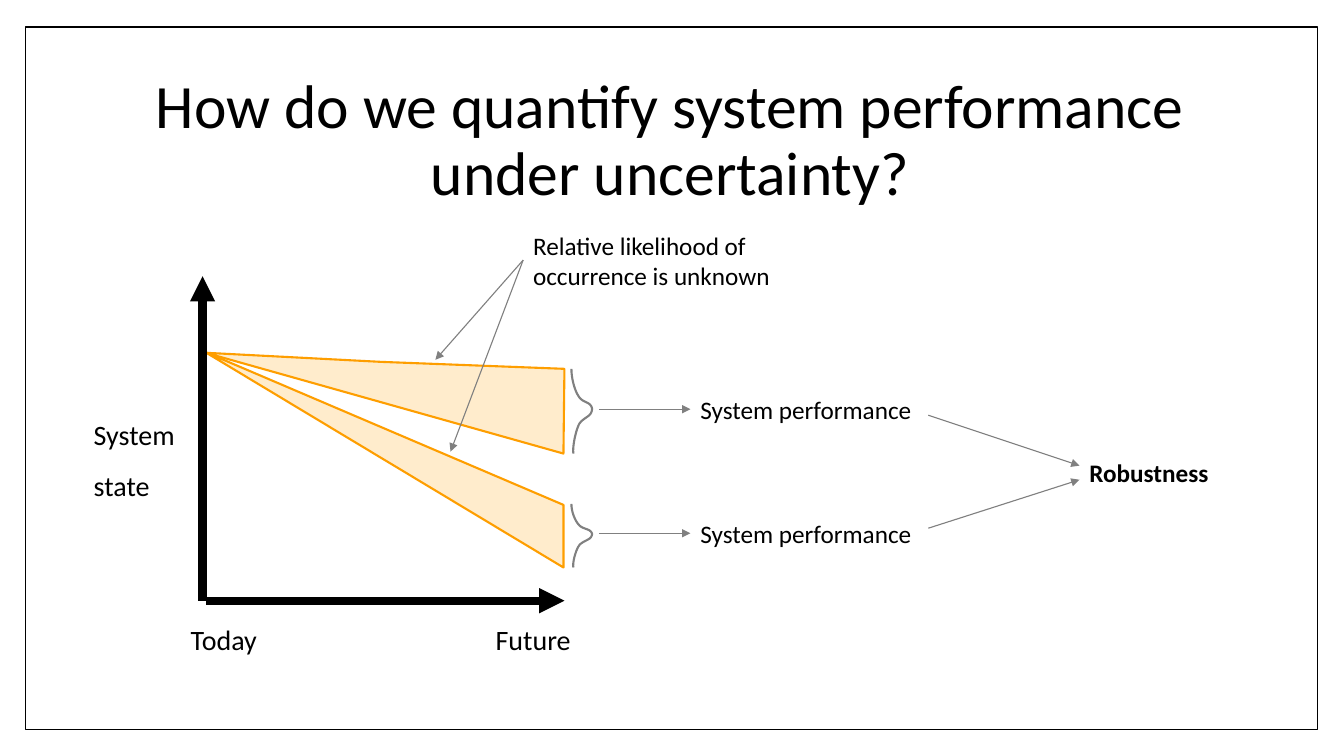
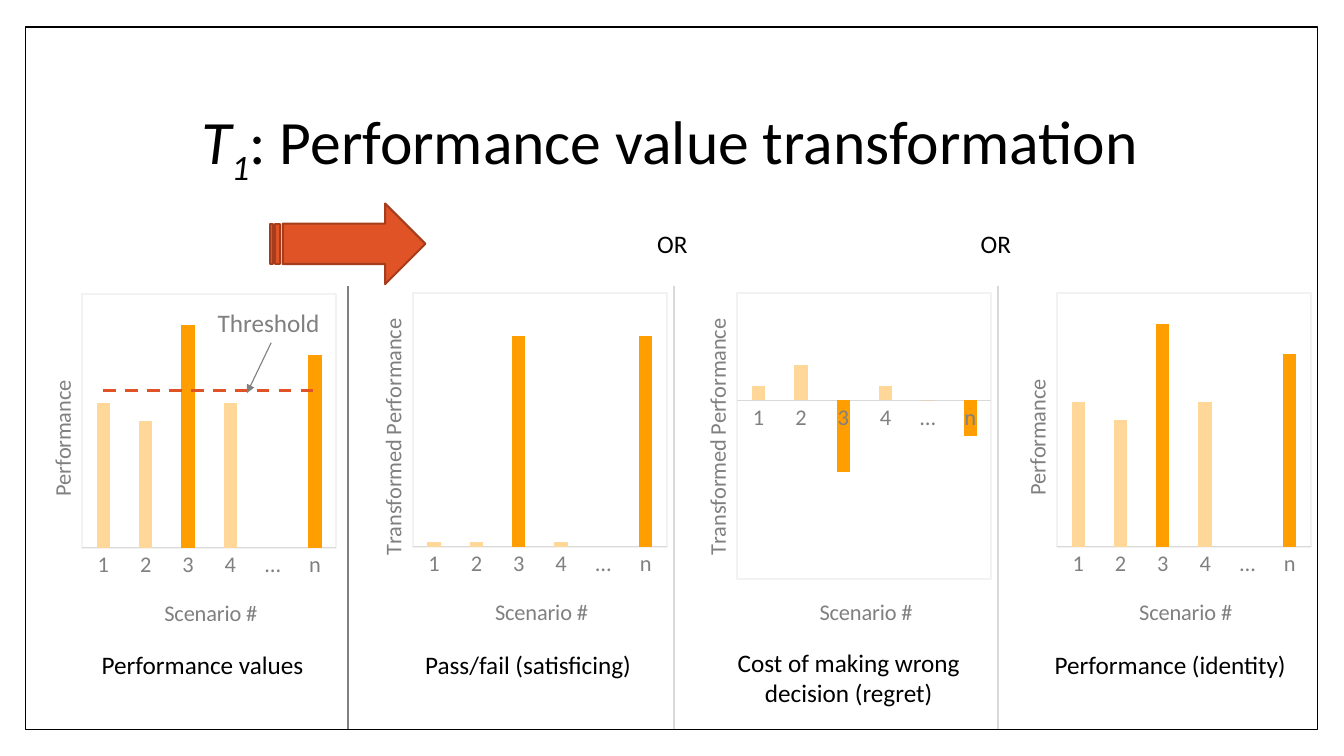
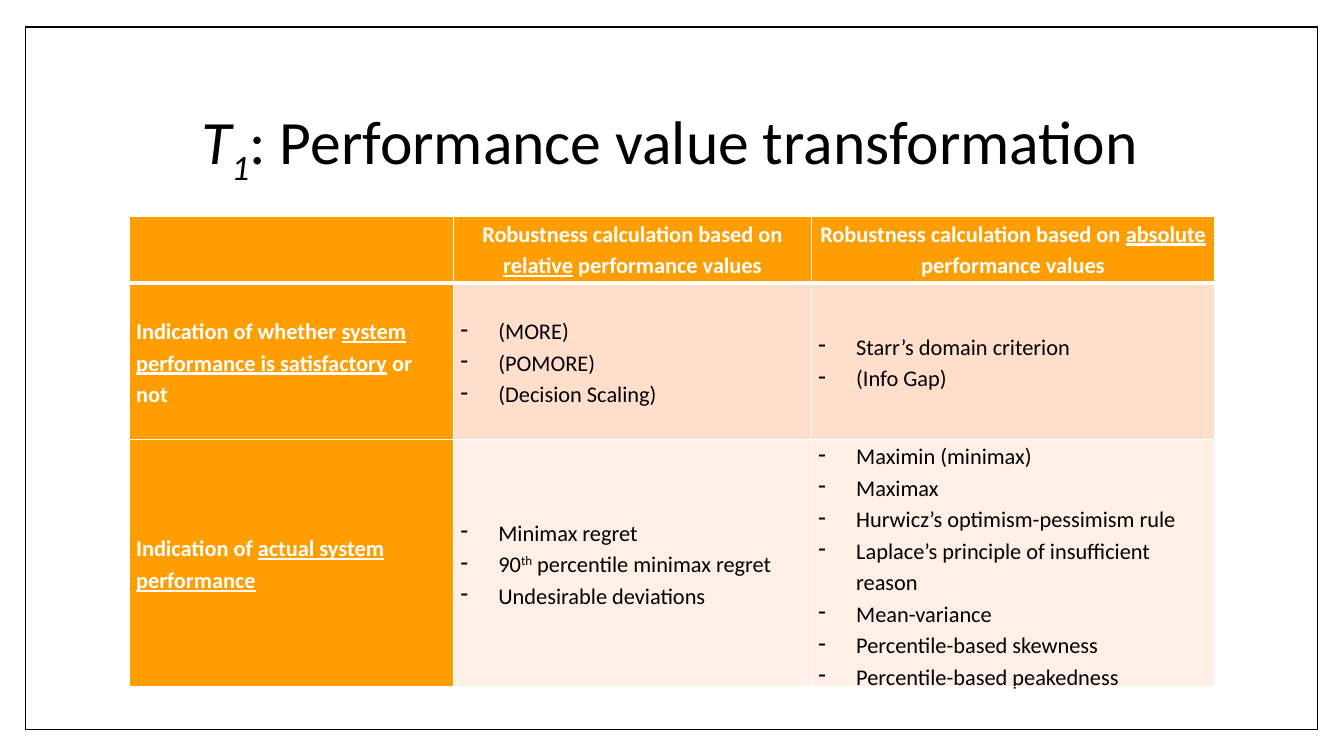
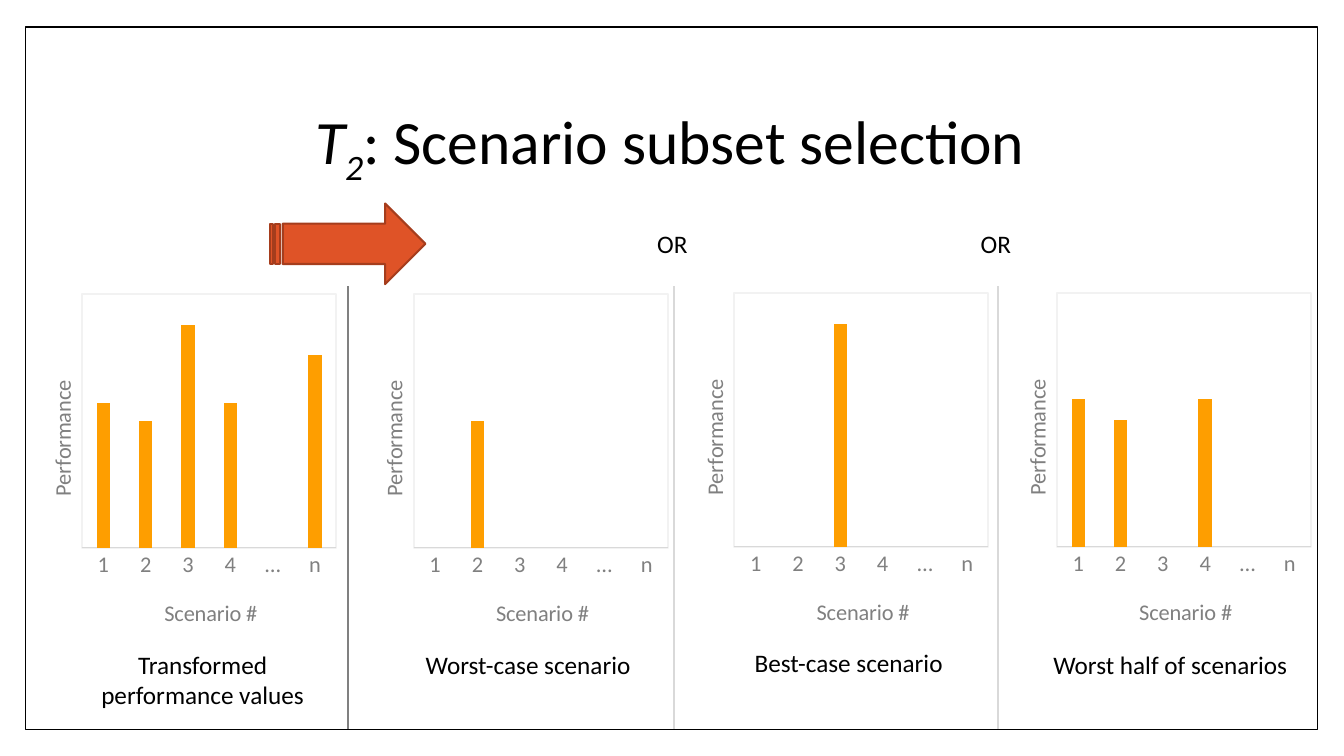
"""Build four slides on measuring system performance under uncertainty."""
from copy import deepcopy

from pptx import Presentation
from pptx import util as u
from pptx.chart.data import CategoryChartData
from pptx.dml.color import RGBColor
from pptx.enum import chart as charts
from pptx.enum import dml, shapes, text
from pptx.oxml import parse_xml
from pptx.oxml.ns import nsdecls, qn

FONT = "Calibri"
BLACK, WHITE, GRAY, PALE_GRAY = "000000", "FFFFFF", "808080", "D9D9D9"
ORANGE, PALE_ORANGE, WEDGE_FILL = "FE9E00", "FFD899", "FFECCC"
RED, DARK_RED = "DF5327", "A53D1D"
BODY_FILLS = ["FFDFCC", "FFF0E7"]
CENTER = text.PP_ALIGN.CENTER
CATEGORIES = ["1", "2", "3", "4", "…", "n"]
VALUES = [87, 84, 100, 87, 0, 95]
CHART_SIZE = (232.6, 254.9)
CAPTION_WIDTH = 204.5
BRACE_CURVES = [
    [(0, 0), (0, 0.11), (2.2, 0.25), (5, 0.32)],
    [(5, 0.32), (7.2, 0.39), (12.2, 0.39), (13.7, 0.43)],
    [(13.7, 0.43), (15.1, 0.46), (15.1, 0.49), (13.7, 0.53)],
    [(13.7, 0.53), (12.2, 0.57), (6.5, 0.6), (5, 0.67)],
    [(5, 0.67), (2.9, 0.75), (0.7, 0.92), (1.4, 1)],
]


def color(value):
    """Turn a hex string into a colour."""
    return RGBColor.from_string(value)


def points(*lengths):
    """Turn numbers into lengths in points."""
    return [u.Pt(length) for length in lengths]


def style_font(font, size, shade, bold=False):
    """Set the shared font with a size and colour."""
    font.name, font.size, font.bold = FONT, u.Pt(size), bold
    font.color.rgb = color(shade)


def style_line(line, shade, width):
    """Set a solid line colour and width."""
    line.color.rgb = color(shade)
    line.width = u.Pt(width)


def style_shape(shape, fill, shade, width):
    """Set fill and outline, without shadow."""
    shape.shadow.inherit = False
    if fill:
        shape.fill.solid()
        shape.fill.fore_color.rgb = color(fill)
    else:
        shape.fill.background()
    style_line(shape.line, shade, width)


def write_runs(paragraph, pieces, size, shade, bold=False):
    """Add runs given as plain strings or as (string, marks) pairs."""
    for piece in pieces:
        words, marks = (piece, "") if isinstance(piece, str) else piece
        run = paragraph.add_run()
        run.text = words
        style_font(run.font, size, shade, bold)
        run.font.italic = "italic" in marks
        run.font.underline = "underline" in marks
        for mark, baseline in (("sub", "-25000"), ("super", "30000")):
            if mark in marks:
                run.font._element.set("baseline", baseline)


def add_text(slide, box, pieces, size=18, shade=BLACK, bold=False, align=None, spacing=None):
    """Add a wrapped text box and return it."""
    shape = slide.shapes.add_textbox(*points(*box))
    shape.text_frame.word_wrap = True
    paragraph = shape.text_frame.paragraphs[0]
    paragraph.alignment = align
    paragraph.line_spacing = spacing
    write_runs(paragraph, pieces, size, shade, bold)
    return shape


def add_title(slide, pieces):
    """Add the centred slide title."""
    shape = add_text(slide, (90, 48.2, 777.6, 106.6), pieces, 44, align=CENTER, spacing=0.9)
    shape.text_frame.vertical_anchor = text.MSO_ANCHOR.MIDDLE


def add_line(slide, start, end, shade=GRAY, width=0.79, arrow=True):
    """Add a straight line, by default with an arrowhead."""
    connector = slide.shapes.add_connector(shapes.MSO_CONNECTOR.STRAIGHT, *points(*start, *end))
    style_line(connector.line, shade, width)
    properties = connector._element.spPr
    if arrow:
        head = parse_xml(f'<a:tailEnd {nsdecls("a")} type="triangle"/>')
        properties.find(qn("a:ln")).append(head)
    properties.append(parse_xml(f'<a:effectLst {nsdecls("a")}/>'))


def add_outline(slide, corners, fill, shade, closed=True):
    """Add a freeform through the given corners."""
    start, *rest = [points(*corner) for corner in corners]
    builder = slide.shapes.build_freeform(*start, scale=1.0)
    builder.add_line_segments(rest, close=closed)
    style_shape(builder.convert_to_shape(), fill, shade, 1.5)


def curve_point(curve, step):
    """Return the point of a cubic curve at a step from 0 to 1."""
    rest = 1 - step
    weights = (rest**3, 3 * rest**2 * step, 3 * rest * step**2, step**3)
    return [sum(w * p[axis] for w, p in zip(weights, curve)) for axis in (0, 1)]


def add_brace(slide, left, top, height):
    """Add a curved brace that opens to the left."""
    route = [curve_point(curve, step / 8) for curve in BRACE_CURVES for step in range(9)]
    corners = [(left + x, top + y * height) for x, y in route]
    add_outline(slide, corners, None, GRAY, closed=False)


def make_layout(x, y, size=None):
    """Return a manual chart layout in fractions of the chart."""
    target = '<c:layoutTarget val="inner"/>' if size else ""
    sides = {"x": x, "y": y}
    if size:
        sides.update(w=size[0], h=size[1])
    modes = '<c:xMode val="edge"/><c:yMode val="edge"/>'
    values = "".join(f'<c:{side} val="{value}"/>' for side, value in sides.items())
    return parse_xml(f'<c:layout {nsdecls("c")}><c:manualLayout>{target}{modes}{values}'
                     '</c:manualLayout></c:layout>')


def title_axis(axis, words, x, y, rotation=0):
    """Give an axis a title at a fixed place."""
    title = axis.axis_title
    title.text_frame.text = words
    style_font(title.text_frame.paragraphs[0].runs[0].font, 16, GRAY)
    element = title._element
    element.find(".//" + qn("a:bodyPr")).set("rot", str(rotation * 60000))
    for layout in element.findall(qn("c:layout")):
        element.remove(layout)
    element.find(qn("c:tx")).addnext(make_layout(x, y))


def split_threshold(chart):
    """Turn the second column series into a dashed line."""
    bars = chart._chartSpace.find(".//" + qn("c:barChart"))
    series = bars.findall(qn("c:ser"))[1]
    lines = parse_xml(f'<c:lineChart {nsdecls("c")}><c:grouping val="standard"/>'
                      '<c:varyColors val="0"/><c:marker val="1"/></c:lineChart>')
    for inversion in series.findall(qn("c:invertIfNegative")):
        series.remove(inversion)
    lines.insert(2, series)
    for axis in bars.findall(qn("c:axId")):
        lines.append(deepcopy(axis))
    bars.addnext(lines)
    threshold = chart.plots[1].series[0]
    style_line(threshold.format.line, RED, 2.25)
    threshold.format.line.dash_style = dml.MSO_LINE.DASH
    threshold.marker.style = charts.XL_MARKER_STYLE.NONE
    threshold.smooth = False


def frame_plot(chart, height):
    """Place the plot area, outline it and clear the chart background."""
    area = chart._chartSpace.chart.plotArea
    for layout in area.findall(qn("c:layout")):
        area.remove(layout)
    area.insert(0, make_layout(0.2, 0.02, (0.78, height)))
    area.append(parse_xml(
        f'<c:spPr {nsdecls("c", "a")}><a:noFill/><a:ln w="{u.Pt(1.5)}"><a:solidFill>'
        '<a:srgbClr val="F2F2F2"/></a:solidFill></a:ln></c:spPr>'))
    chart._chartSpace.chart.addnext(parse_xml(
        f'<c:spPr {nsdecls("c", "a")}><a:noFill/><a:ln><a:noFill/></a:ln></c:spPr>'))


def add_columns(slide, corner, values, limits, strong=range(6), label="Performance",
                height=0.71, threshold=None):
    """Add a column chart with strong and pale columns."""
    data = CategoryChartData()
    data.categories = CATEGORIES
    data.add_series("Series 1", values)
    if threshold:
        data.add_series("Series 2", [threshold] * len(CATEGORIES))
    chart = slide.shapes.add_chart(
        charts.XL_CHART_TYPE.COLUMN_CLUSTERED, *points(*corner, *CHART_SIZE), data).chart
    style_font(chart.font, 10, BLACK)
    chart.has_legend = chart.has_title = False
    if threshold:
        split_threshold(chart)
    plot = chart.plots[0]
    plot.gap_width, plot.overlap, plot.vary_by_categories = 219, -27, False
    series = plot.series[0]
    series.invert_if_negative = False
    series.format.fill.solid()
    series.format.fill.fore_color.rgb = color(PALE_ORANGE)
    for index in strong:
        fill = series.points[index].format.fill
        fill.solid()
        fill.fore_color.rgb = color(ORANGE)
    category, value = chart.category_axis, chart.value_axis
    for axis in (category, value):
        axis.major_tick_mark = axis.minor_tick_mark = charts.XL_TICK_MARK.NONE
        axis.has_major_gridlines = False
    style_font(category.tick_labels.font, 16, GRAY)
    style_line(category.format.line, PALE_GRAY, 0.75)
    value.minimum_scale, value.maximum_scale = limits
    value.tick_label_position = charts.XL_TICK_LABEL_POSITION.NONE
    value.format.line.fill.background()
    title_axis(category, "Scenario #", 0.44, 0.86)
    title_axis(value, label, 0.08, 0.25 if label == "Performance" else 0.08, -90)
    frame_plot(chart, height)


def add_panels(slide, captions):
    """Add what both chart slides share: dividers, arrow, choices and captions."""
    for x, shade in ((248.4, GRAY), (481.7, PALE_GRAY), (712.8, PALE_GRAY)):
        add_line(slide, (x, 520.6), (x, 204.5), shade, 1.5, arrow=False)
    arrow = slide.shapes.add_shape(
        shapes.MSO_SHAPE.STRIPED_RIGHT_ARROW, *points(193, 145.4, 110.9, 57.6))
    style_shape(arrow, RED, DARK_RED, 1.5)
    for left in (378, 609.1):
        add_text(slide, (left, 159.8, CAPTION_WIDTH, 28.8), ["OR"], align=CENTER)
    corners = ((42.5, 460.1), (275, 460.1), (504, 458.6), (733.7, 460.1))
    for corner, caption in zip(corners, captions):
        add_text(slide, (*corner, CAPTION_WIDTH, 28.8), [caption], align=CENTER)


def set_borders(cell, bottom):
    """Give a cell white borders."""
    properties = cell._tc.get_or_add_tcPr()
    for index, (side, width) in enumerate((("L", 1), ("R", 1), ("T", 1), ("B", bottom))):
        properties.insert(index, parse_xml(
            f'<a:ln{side} {nsdecls("a")} w="{u.Pt(width)}"><a:solidFill>'
            f'<a:srgbClr val="{WHITE}"/></a:solidFill></a:ln{side}>'))


def fill_cell(cell, paragraphs, fill, header=False, bullets=False):
    """Write the paragraphs of a table cell and style it."""
    cell.fill.solid()
    cell.fill.fore_color.rgb = color(fill)
    set_borders(cell, 3 if header else 1)
    cell.margin_left = cell.margin_right = u.Pt(5)
    cell.margin_top = cell.margin_bottom = 0
    cell.vertical_anchor = text.MSO_ANCHOR.TOP if header else text.MSO_ANCHOR.MIDDLE
    for index, pieces in enumerate(paragraphs):
        frame = cell.text_frame
        paragraph = frame.add_paragraph() if index else frame.paragraphs[0]
        paragraph.line_spacing = 1.15
        paragraph.alignment = CENTER if header else None
        write_runs(paragraph, pieces, 16, BLACK if bullets else WHITE, not bullets)
        if bullets:
            properties = paragraph._p.get_or_add_pPr()
            properties.set("marL", str(u.Pt(27)))
            properties.set("indent", str(-u.Pt(27)))
            properties.append(parse_xml(f'<a:buChar {nsdecls("a")} char="-"/>'))


def add_grid(slide, corner, widths, heights, rows):
    """Add a table with a header row and a header column."""
    size = (sum(widths), sum(heights))
    table = slide.shapes.add_table(
        len(heights), len(widths), *points(*corner, *size)).table
    table.first_row = table.horz_banding = False
    for column, width in zip(table.columns, widths):
        column.width = u.Pt(width)
    for row, height in zip(table.rows, heights):
        row.height = u.Pt(height)
    for i, row in enumerate(rows):
        for j, paragraphs in enumerate(row):
            body = i > 0 and j > 0
            fill = BODY_FILLS[i - 1] if body else ORANGE
            fill_cell(table.cell(i, j), paragraphs, fill, header=i == 0, bullets=body)


def add_frame(presentation, slide):
    """Put the border that all slides share on the master."""
    frame = slide.shapes.add_shape(
        shapes.MSO_SHAPE.RECTANGLE, *points(18, 19.4, 923, 501.8))
    style_shape(frame, WHITE, BLACK, 1)
    presentation.slide_master.shapes._spTree.insert(2, frame._element)


def build_question(slide):
    """Draw the diverging futures and their route to robustness."""
    add_title(slide, ["How do we quantify system performance under uncertainty?"])
    for top in (277.9, 366.5):
        add_text(slide, (493.2, top, 170, 28.8), ["System performance"])
        add_line(slide, (427.7, top + 14.4), (493.2, top + 14.4))
    add_text(slide, (771.1, 323.3, 120.2, 28.8), ["Robustness"], bold=True)
    add_line(slide, (663.1, 296.6), (771.1, 332.6))
    add_line(slide, (663.1, 377.3), (771.1, 342.7))
    add_text(slide, (59.8, 283, 79.9, 80.6), ["System state"], 20, spacing=1.5)
    for left, label in ((121.7, "Today"), (342.7, "Future")):
        add_text(slide, (left, 429.1, 76.3, 52.6), [label], 20, align=CENTER, spacing=1.5)
    add_line(slide, (146.9, 429.1), (403.2, 429.1), BLACK, 6)
    upper = [(146.9, 252), (272, 258.5), (403.2, 263.5), (402.5, 324)]
    lower = [(146.2, 251.3), (402.5, 405.4), (402.5, 360.7)]
    for wedge in (upper, lower):
        add_outline(slide, wedge, WEDGE_FILL, ORANGE)
    add_brace(slide, 408.2, 263.5, 60.5)
    add_brace(slide, 408.2, 360, 45.4)
    add_line(slide, (144.7, 429.1), (144.7, 197.3), BLACK, 6)
    add_text(slide, (373.7, 160.6, 238.3, 51.1),
             ["Relative likelihood of occurrence is unknown"])
    for end in ((311, 257), (321.8, 322.6)):
        add_line(slide, (373.7, 185.8), end)


def build_transformation(slide, title):
    """Show performance values and three ways to transform them."""
    add_title(slide, title)
    transformed = "Transformed Performance"
    add_columns(slide, (12.2, 205.2), VALUES, (63, 105), (2, 5), threshold=89)
    add_columns(slide, (248.4, 204.5), [2, 2, 100, 2, None, 100], (0, 120), (2, 5), transformed)
    add_columns(slide, (480.2, 204.5), [20, 50, -100, 20, 0, -50], (-250, 150), (2, 4, 5),
                transformed, height=0.8)
    add_columns(slide, (708.5, 204.5), VALUES, (63, 105), (2, 5))
    add_panels(slide, ["Performance values", "Pass/fail (satisficing)",
                       "Cost of making wrong decision (regret)", "Performance (identity)"])
    add_text(slide, (144.7, 216, 94.3, 28.8), ["Threshold"], shade=GRAY, align=CENTER)
    add_line(slide, (193.7, 244.8), (176.4, 280.8))


def build_metrics(slide, title):
    """List the robustness metrics by type of calculation."""
    add_title(slide, title)
    calculation = "Robustness calculation based on "
    headers = [[[calculation, (kind, "underline"), " performance values"]]
               for kind in ("relative", "absolute")]
    rows = [
        [[], *headers],
        [[["Indication of whether ", ("system performance is satisfactory", "underline"),
           " or not"]],
         [["(MORE)"], ["(POMORE)"], ["(Decision Scaling)"]],
         [["Starr’s domain criterion"], ["(Info Gap)"]]],
        [[["Indication of ", ("actual system performance", "underline")]],
         [["Minimax regret"], ["90", ("th", "super"), " percentile minimax regret"],
          ["Undesirable deviations"]],
         [["Maximin (minimax)"], ["Maximax"], ["Hurwicz’s optimism-pessimism rule"],
          ["Laplace’s principle of insufficient reason"], ["Mean-variance"],
          ["Percentile-based skewness"], ["Percentile-based peakedness"]]],
    ]
    add_grid(slide, (92.2, 154.8), (231.8, 255.6, 288), (47.5, 111.6, 159.1), rows)


def build_selection(slide, title):
    """Show transformed values and three subsets of scenarios."""
    add_title(slide, title)
    add_columns(slide, (12.2, 205.2), VALUES, (63, 105))
    add_columns(slide, (249.1, 205.2), [None, 100, None, None, 0, None], (75, 125))
    add_columns(slide, (478.1, 204.5), [None, None, 100, None, None, None], (63, 105))
    add_columns(slide, (708.5, 204.5), [100, 96, None, 100, 0, None], (72, 120))
    add_panels(slide, ["Transformed performance values", "Worst-case scenario",
                       "Best-case scenario", "Worst half of scenarios"])


def main():
    """Build and save the presentation."""
    presentation = Presentation()
    presentation.slide_width, presentation.slide_height = points(960, 540)
    blank = presentation.slide_layouts[6]
    question, transformation, metrics, selection = [
        presentation.slides.add_slide(blank) for _ in range(4)]
    add_frame(presentation, question)
    value_title = [("T", "italic"), ("1", "italic sub"), ": Performance value transformation"]
    subset_title = [("T", "italic"), ("2", "italic sub"), ": Scenario subset selection"]
    build_question(question)
    build_transformation(transformation, value_title)
    build_metrics(metrics, value_title)
    build_selection(selection, subset_title)
    presentation.save("out.pptx")


if __name__ == "__main__":
    main()
